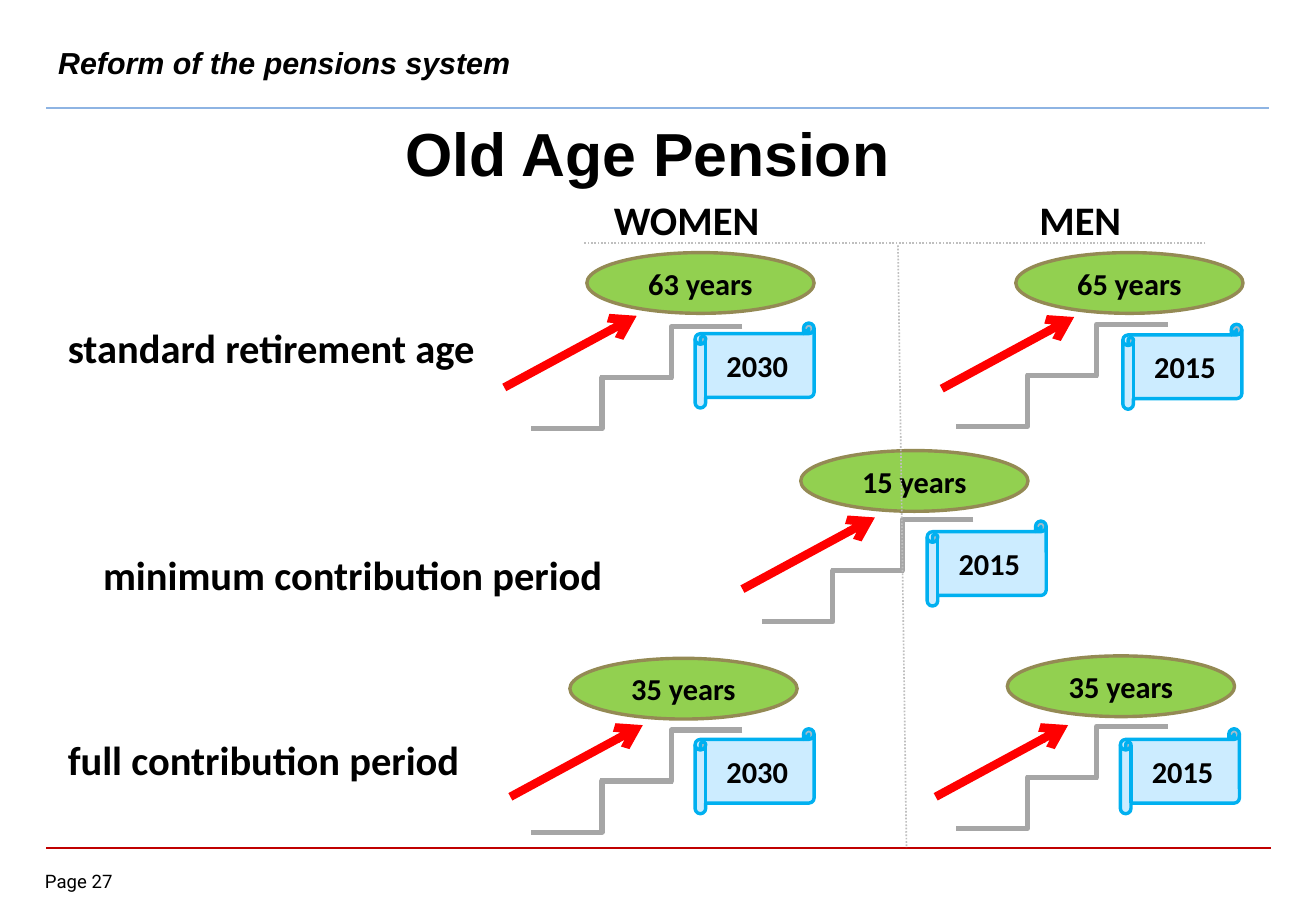
from dataclasses import dataclass

from lxml import etree
from pptx import Presentation
from pptx.dml.color import RGBColor
from pptx.enum.dml import MSO_LINE
from pptx.enum.shapes import MSO_CONNECTOR, MSO_SHAPE
from pptx.enum.text import MSO_ANCHOR, PP_ALIGN
from pptx.oxml.ns import qn
from pptx.util import Inches, Pt

STRAIGHT, ELBOW = MSO_CONNECTOR.STRAIGHT, MSO_CONNECTOR.ELBOW
OVAL, SCROLL = MSO_SHAPE.OVAL, MSO_SHAPE.HORIZONTAL_SCROLL
LEFT, CENTER = PP_ALIGN.LEFT, PP_ALIGN.CENTER
MIDDLE = MSO_ANCHOR.MIDDLE
DOTTED = MSO_LINE.ROUND_DOT

COLORS = {
    "text": "000000", "header_rule": "8EB4E3", "footer_rule": "C00000",
    "age_fill": "92D050", "age_line": "948A54",
    "year_fill": "CCECFF", "year_line": "00B0F0",
    "arrow": "FF0000", "stairs": "A6A6A6", "divider": "BFBFBF",
}
Point = tuple[float, float]


@dataclass
class Label:
    text: str
    at: Point
    size: Point
    points: float
    font: str = "Calibri"
    align: PP_ALIGN = LEFT
    bold: bool = True
    italic: bool = False
    inset: float = 0.1


@dataclass
class Target:
    """A goal to be reached in steps by a given year."""
    goal: str
    year: str
    goal_at: Point
    year_at: Point
    arrow_from: Point
    stairs_at: Point


LABELS = [
    Label("Page 27", (0.37, 7.14), (0.73, 0.22), 11, "Roboto", bold=False, inset=0),
    Label("Old Age Pension", (0.29, 0.84), (10.08, 0.82), 36, "Arial", CENTER),
    Label("Reform of the pensions system", (0.38, 0.26), (10.08, 0.5), 18, "Arial",
          italic=True),
    Label("WOMEN", (4.65, 1.56), (2, 0.5), 24, align=CENTER),
    Label("MEN", (7.89, 1.56), (2, 0.5), 24, align=CENTER),
    Label("standard retirement age", (0.46, 2.61), (3.8, 0.5), 24),
    Label("minimum contribution period", (0.75, 4.48), (4.6, 0.5), 24),
    Label("full contribution period", (0.46, 6), (3.8, 0.5), 24),
]
TARGETS = [
    Target("65 years", "2015", (8.36, 2.08), (9.24, 2.67), (7.75, 3.2), (7.87, 2.67)),
    Target("15 years", "2015", (6.59, 3.71), (7.63, 4.29), (6.11, 4.85), (6.27, 4.28)),
    Target("35 years", "2030", (4.69, 5.42), (5.72, 6), (4.2, 6.56), (4.37, 6.01)),
    Target("35 years", "2015", (8.29, 5.4), (9.22, 6), (7.7, 6.56), (7.87, 5.98)),
    Target("63 years", "2030", (4.83, 2.08), (5.72, 2.66), (4.15, 3.19), (4.37, 2.69)),
]
GOAL_SIZE, YEAR_SIZE = (1.87, 0.5), (0.98, 0.7)
ARROW_RUN, ARROW_RISE = 1.09, 0.59
STEP_WIDTH, STEP_HEIGHT, STEP_SHIFT = 1.17, 0.42, 0.57


def rgb(name: str) -> RGBColor:
    return RGBColor.from_string(COLORS[name])


def format_text(frame, label: Label) -> None:
    frame.text = label.text
    frame.word_wrap = True
    frame.vertical_anchor = MIDDLE
    paragraph = frame.paragraphs[0]
    paragraph.alignment = label.align
    font = paragraph.runs[0].font
    font.name, font.size = label.font, Pt(label.points)
    font.bold, font.italic = label.bold, label.italic
    font.color.rgb = rgb("text")


def draw_label(shapes, label: Label) -> None:
    frame = shapes.add_textbox(*map(Inches, label.at + label.size)).text_frame
    format_text(frame, label)
    frame.margin_left = frame.margin_right = Inches(label.inset)
    frame.margin_top = frame.margin_bottom = Inches(label.inset / 2)


def draw_badge(shapes, kind: MSO_SHAPE, label: Label, color: str) -> None:
    badge = shapes.add_shape(kind, *map(Inches, label.at + label.size))
    badge.shadow.inherit = False
    badge.fill.solid()
    badge.fill.fore_color.rgb = rgb(f"{color}_fill")
    badge.line.color.rgb = rgb(f"{color}_line")
    badge.line.width = Pt(2)
    format_text(badge.text_frame, label)


def draw_line(shapes, start: Point, end: Point, color: str, width: float,
              kind: MSO_CONNECTOR = STRAIGHT, dash: MSO_LINE | None = None,
              arrow: bool = False) -> None:
    connector = shapes.add_connector(kind, *map(Inches, start + end))
    connector.line.color.rgb = rgb(color)
    connector.line.width = Pt(width)
    if dash is not None:
        connector.line.dash_style = dash
    if arrow:
        etree.SubElement(connector.line._get_or_add_ln(), qn("a:tailEnd"), type="arrow")
    etree.SubElement(connector._element.spPr, qn("a:effectLst"))


def draw_target(shapes, target: Target) -> None:
    draw_badge(shapes, OVAL,
               Label(target.goal, target.goal_at, GOAL_SIZE, 18, align=CENTER), "age")
    draw_badge(shapes, SCROLL,
               Label(target.year, target.year_at, YEAR_SIZE, 18, align=CENTER), "year")
    x, y = target.arrow_from
    draw_line(shapes, (x, y), (x + ARROW_RUN, y - ARROW_RISE), "arrow", 5, arrow=True)
    # Two overlapping steps, the lower one first
    x, y = target.stairs_at
    for left, top in ((x, y + STEP_HEIGHT), (x + STEP_SHIFT, y)):
        draw_line(shapes, (left + STEP_WIDTH, top), (left, top + STEP_HEIGHT),
                  "stairs", 3, ELBOW)


def main() -> None:
    presentation = Presentation()
    presentation.slide_width, presentation.slide_height = Inches(10.83), Inches(7.5)
    shapes = presentation.slides.add_slide(presentation.slide_layouts[6]).shapes

    # Header and footer rules
    draw_line(shapes, (0.38, 6.98), (10.46, 6.98), "footer_rule", 1)
    draw_line(shapes, (0.38, 0.89), (10.44, 0.89), "header_rule", 1.5)

    # Headings and row labels
    for label in LABELS:
        draw_label(shapes, label)

    # Targets for women, men and both
    for target in TARGETS:
        draw_target(shapes, target)

    # Dotted table dividers
    draw_line(shapes, (7.39, 2.02), (7.46, 6.98), "divider", 1, dash=DOTTED)
    draw_line(shapes, (9.92, 2), (4.81, 2), "divider", 1, dash=DOTTED)

    presentation.save("out.pptx")


if __name__ == "__main__":
    main()
